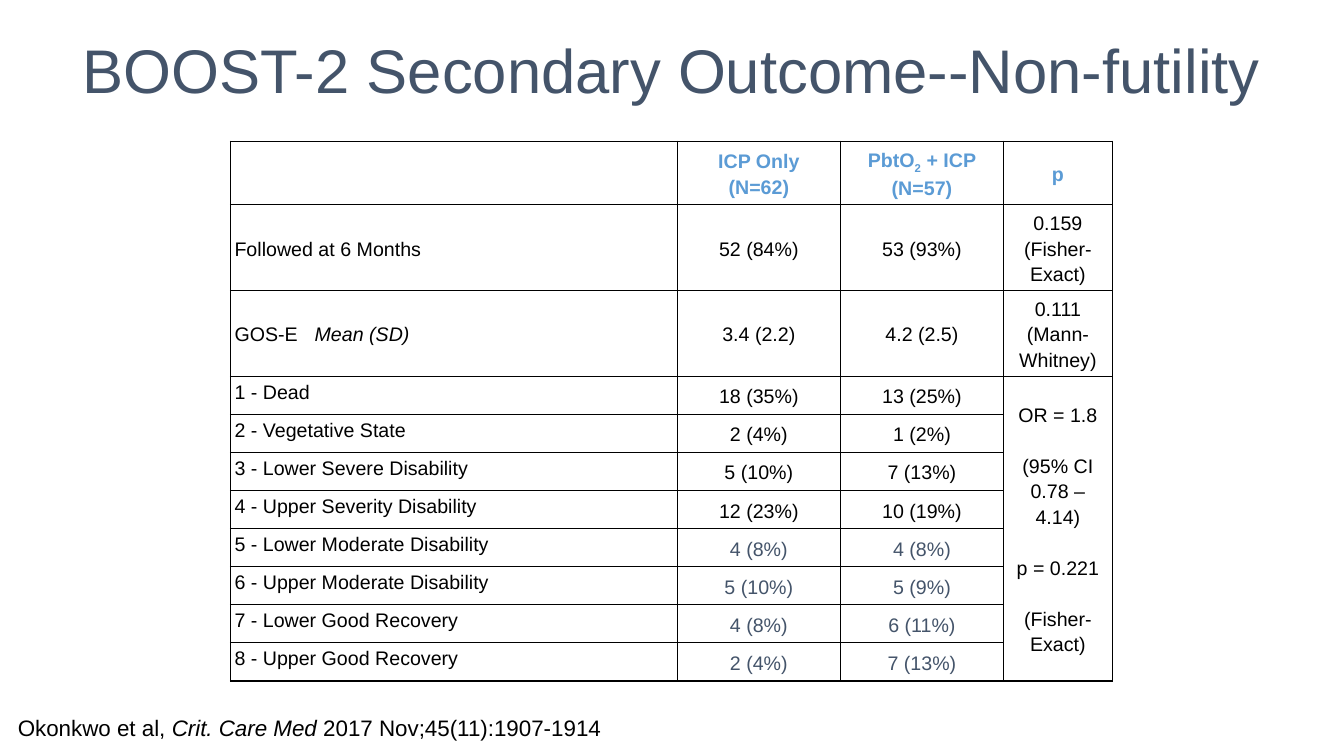
from dataclasses import dataclass

from lxml.etree import SubElement
from pptx import Presentation
from pptx.dml.color import RGBColor as Rgb
from pptx.enum.text import MSO_ANCHOR as Anchor, PP_ALIGN as Align
from pptx.oxml import parse_xml
from pptx.oxml.ns import nsdecls, qn
from pptx.util import Cm, Pt

# Cells are strings or lists of (text, style) pieces; "\v" breaks a line.
TITLE = "BOOST-2 Secondary Outcome--Non-futility"
HEADER = ["", "ICP Only\v(N=62)",
          [("PbtO", ""), ("2", "sub"), (" + ICP\v(N=57)", "")], "p"]
SUMMARY = [
    ["Followed at 6 Months", "52 (84%)", "53 (93%)", "0.159\v(Fisher-Exact)"],
    [[("GOS-E\t", ""), ("Mean (SD)", "italic")],
     "3.4 (2.2)", "4.2 (2.5)", "0.111\v(Mann-Whitney)"],
]
SCORES = [
    ["1 - Dead", "18 (35%)", "13 (25%)"],
    ["2 - Vegetative State", "2 (4%)", "1 (2%)"],
    ["3 - Lower Severe Disability", "5 (10%)", "7 (13%)"],
    ["4 - Upper Severity Disability", "12 (23%)", "10 (19%)"],
    ["5 - Lower Moderate Disability", "4 (8%)", "4 (8%)"],
    ["6 - Upper Moderate Disability", "5 (10%)", "5 (9%)"],
    ["7 - Lower Good Recovery", "4 (8%)", "6 (11%)"],
    ["8 - Upper Good Recovery", "2 (4%)", "7 (13%)"],
]
FIRST_FAVORABLE = 4  # index in SCORES where the counts turn slate
ODDS_RATIO = ["OR = 1.8", "(95% CI 0.78 – 4.14)", "p = 0.221", "(Fisher-Exact)"]
CITATION = [("Okonkwo et al, ", ""), ("Crit. Care Med", "italic"),
            (" 2017 Nov;45(11):1907-1914", "")]

COLUMN_WIDTHS = [Cm(11.26), Cm(4.11), Cm(4.11), Cm(2.74)]
ROW_HEIGHTS = [Cm(1.6)] + [Cm(2.16)] * len(SUMMARY) + [Cm(0.96)] * len(SCORES)
MEAN_TAB = Cm(2.02)


@dataclass(frozen=True)
class Theme:
    font: str = "Arial"
    slate: Rgb = Rgb(0x44, 0x54, 0x6A)
    blue: Rgb = Rgb(0x5B, 0x9B, 0xD5)
    black: Rgb = Rgb(0, 0, 0)
    title_size: Pt = Pt(44)
    table_size: Pt = Pt(14)
    citation_size: Pt = Pt(16)
    line_spacing: float = 1.15
    paragraph_gap: Pt = Pt(18.5)
    border: Pt = Pt(1)


THEME = Theme()


def write(para, content, size, color, bold=False):
    """Fill a paragraph from a string or a list of (text, style) pieces."""
    pieces = [(content, "")] if isinstance(content, str) else content
    for text, style in pieces:
        for index, line in enumerate(text.split("\v")):
            if index:
                para.add_line_break()
            span = para.add_run()
            span.text = line
            font = span.font
            font.name, font.size, font.bold = THEME.font, size, bold
            font.color.rgb = color
            font.italic = style == "italic"
            if style == "sub":
                span._r.get_or_add_rPr().set("baseline", "-25000")


def add_text(page, left, top, width, height, content, size, color, align):
    box = page.shapes.add_textbox(left, top, width, height)
    box.text_frame.word_wrap = True
    para = box.text_frame.paragraphs[0]
    para.alignment = align
    write(para, content, size, color)


def add_borders(cell):
    properties = cell._tc.get_or_add_tcPr()
    for index, side in enumerate(("lnL", "lnR", "lnT", "lnB")):
        properties.insert(index, parse_xml(
            f'<a:{side} {nsdecls("a")} w="{THEME.border}"><a:solidFill>'
            f'<a:srgbClr val="{THEME.black}"/></a:solidFill></a:{side}>'))


def add_tab_stop(para, position):
    tabs = SubElement(para._p.get_or_add_pPr(), qn("a:tabLst"))
    SubElement(tabs, qn("a:tab"), pos=str(int(position)), algn="l")


def fill_cell(cell, paragraphs, align, anchor, color, bold=False):
    cell.vertical_anchor = anchor
    frame = cell.text_frame
    for index, content in enumerate(paragraphs):
        para = frame.add_paragraph() if index else frame.paragraphs[0]
        para.alignment = align
        para.line_spacing = THEME.line_spacing
        if index:
            para.space_before = THEME.paragraph_gap
        write(para, content, THEME.table_size, color, bold)


def add_outcomes(page):
    rows = [HEADER] + SUMMARY + SCORES
    first_score = 1 + len(SUMMARY)
    table = page.shapes.add_table(
        len(rows), len(HEADER), Cm(5.81), Cm(3.56),
        sum(COLUMN_WIDTHS), sum(ROW_HEIGHTS)).table
    table.first_row = table.horz_banding = False
    for column, width in zip(table.columns, COLUMN_WIDTHS):
        column.width = width
    for row, height in zip(table.rows, ROW_HEIGHTS):
        row.height = height
    for cell in table.iter_cells():
        cell.fill.background()
        add_borders(cell)
        cell.margin_left = cell.margin_right = Cm(0.1)
        cell.margin_top = cell.margin_bottom = Cm(0.05)

    for r, row in enumerate(rows):
        for c, content in enumerate(row):
            if not content:
                continue
            color = THEME.black
            if r == 0:
                color = THEME.blue
            elif c and r >= first_score + FIRST_FAVORABLE:
                color = THEME.slate
            is_score_label = c == 0 and r >= first_score
            fill_cell(table.cell(r, c), [content],
                      Align.CENTER if c else Align.LEFT,
                      Anchor.TOP if is_score_label else Anchor.MIDDLE,
                      color, bold=r == 0)

    mean_label = table.cell(first_score - 1, 0).text_frame.paragraphs[0]
    add_tab_stop(mean_label, MEAN_TAB)
    last = len(HEADER) - 1
    odds_cell = table.cell(first_score, last)
    odds_cell.merge(table.cell(len(rows) - 1, last))
    fill_cell(odds_cell, ODDS_RATIO, Align.CENTER, Anchor.MIDDLE, THEME.black)


def main():
    deck = Presentation()
    deck.slide_width, deck.slide_height = Cm(33.87), Cm(19.05)
    page = deck.slides.add_slide(deck.slide_layouts[6])
    add_text(page, Cm(1.27), Cm(0.69), Cm(31.34), Cm(3.18), TITLE,
             THEME.title_size, THEME.slate, Align.CENTER)
    add_outcomes(page)
    add_text(page, Cm(0.2), Cm(17.88), Cm(15.65), Cm(0.94), CITATION,
             THEME.citation_size, THEME.black, Align.LEFT)
    deck.save("out.pptx")


if __name__ == "__main__":
    main()
